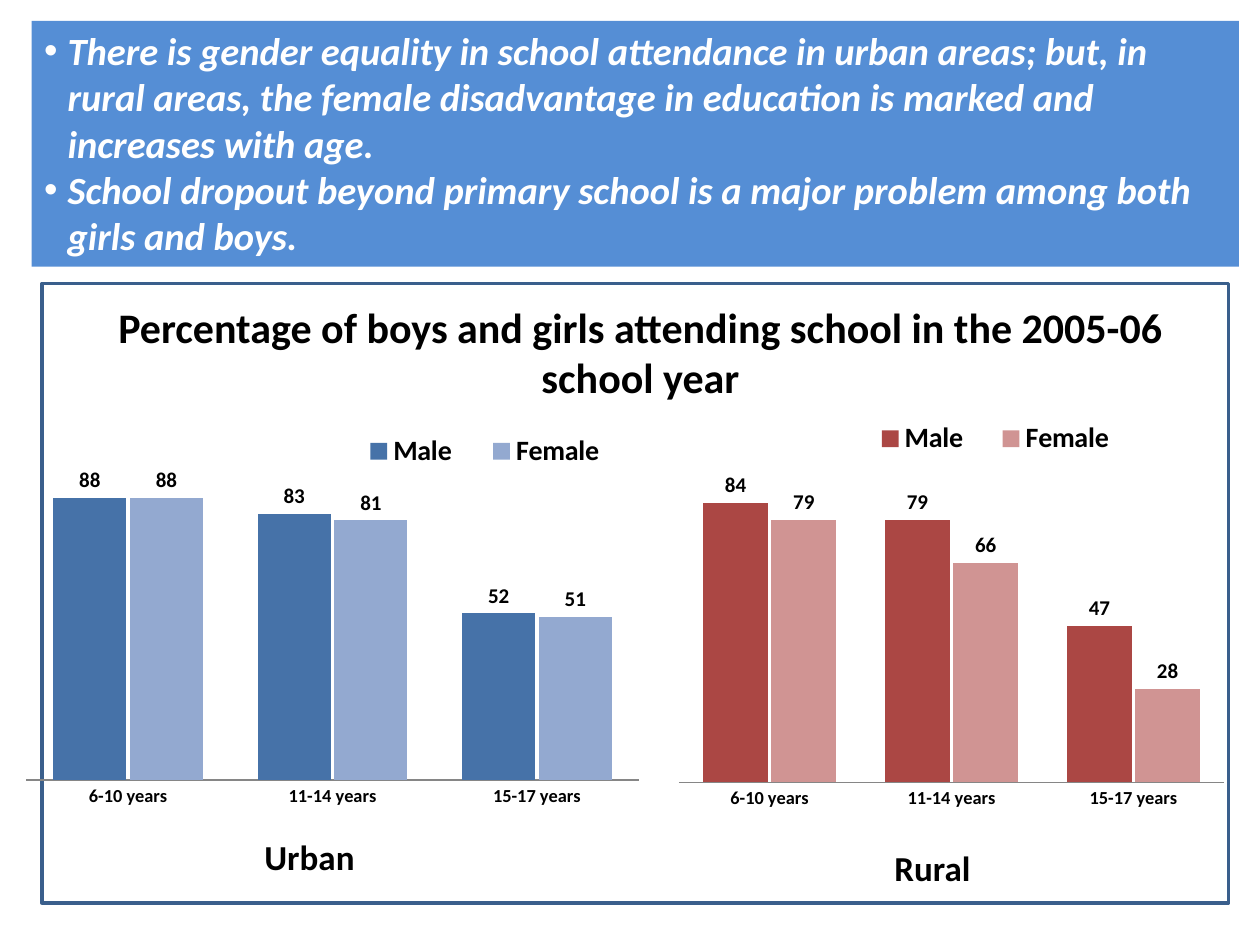
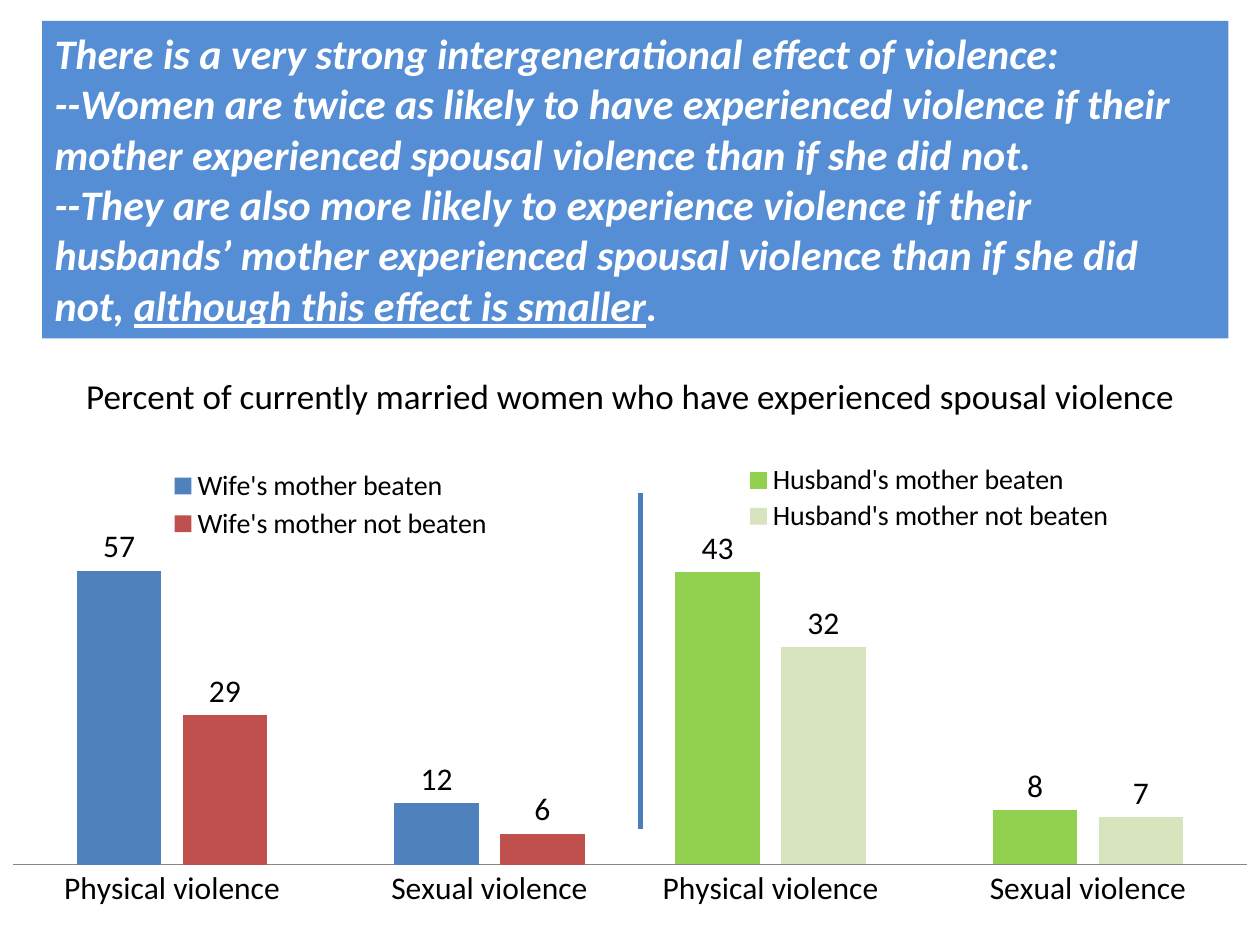
from collections import namedtuple
from dataclasses import dataclass

from lxml import etree
from pptx import Presentation
from pptx.chart.data import CategoryChartData
from pptx.dml.color import RGBColor
from pptx.enum import chart as ch, shapes, text
from pptx.oxml import ns
from pptx.util import Pt

Box = namedtuple("Box", "left top width height")


@dataclass(frozen=True)
class Theme:
    font: str = "Calibri"
    ink: str = "000000"
    paper: str = "FFFFFF"
    band: str = "558ED5"
    frame: str = "3A5F8C"
    divider: str = "4B7EBC"
    axis: str = "868686"
    urban: tuple = ("4672A8", "93A9D0")
    rural: tuple = ("AB4744", "D09493")
    wife: tuple = ("4F81BD", "C0504D")
    husband: tuple = ("92D050", "D7E4BD")
    heading: float = 24
    caption: float = 20
    findings: float = 22
    legend: float = 16


@dataclass(frozen=True)
class ChartStyle:
    category_size: float
    value_size: float
    bold: bool
    gap: int
    overlap: int


THEME = Theme()
ATTENDANCE = ChartStyle(10.5, 12, True, 75, -5)
VIOLENCE = ChartStyle(18, 18, False, 150, -25)


def rgb(value):
    return RGBColor.from_string(value)


def place(shape, box):
    shape.left, shape.top, shape.width, shape.height = map(Pt, box)


def style_font(font, size, color=THEME.ink, bold=False, italic=False):
    font.name = THEME.font
    font.size = Pt(size)
    font.bold = bold
    font.italic = italic
    font.color.rgb = rgb(color)


def add_run(paragraph, words, size, **style):
    run = paragraph.add_run()
    run.text = words
    style_font(run.font, size, **style)
    return run


def set_heading(slide, box, words, size, align, bold=False):
    heading = slide.shapes.title
    place(heading, box)
    frame = heading.text_frame
    frame.word_wrap = True
    frame.auto_size = text.MSO_AUTO_SIZE.NONE
    frame.vertical_anchor = text.MSO_ANCHOR.MIDDLE
    paragraph = frame.paragraphs[0]
    paragraph.alignment = align
    add_run(paragraph, words, size, bold=bold)


def set_bullet(paragraph, indent):
    """Hang a bullet by indent points, or remove it when indent is 0."""
    props = paragraph._p.get_or_add_pPr()
    props.set("marL", str(Pt(indent)))
    props.set("indent", str(-Pt(indent)))
    bullet = etree.SubElement(props, ns.qn("a:buChar" if indent else "a:buNone"))
    if indent:
        bullet.set("char", "•")


def fill_band(slide, box, paragraphs, size, indent=0):
    """Each paragraph is a list of lines; each line a list of (words, underlined)."""
    band = slide.placeholders[1]
    place(band, box)
    band.fill.solid()
    band.fill.fore_color.rgb = rgb(THEME.band)
    frame = band.text_frame
    frame.word_wrap = True
    frame.auto_size = text.MSO_AUTO_SIZE.NONE
    frame.vertical_anchor = text.MSO_ANCHOR.TOP
    for index, lines in enumerate(paragraphs):
        paragraph = frame.add_paragraph() if index else frame.paragraphs[0]
        set_bullet(paragraph, indent)
        paragraph.space_before = Pt(0)
        for number, line in enumerate(lines):
            if number:
                paragraph.add_line_break()
            for words, underlined in line:
                run = add_run(paragraph, words, size, color=THEME.paper,
                              bold=True, italic=True)
                if underlined:
                    run.font.underline = True


def set_layout(parent, area, after=None):
    """Fix a chart part at area, given as fractions of the chart."""
    for old in parent.findall(ns.qn("c:layout")):
        parent.remove(old)
    layout = etree.Element(ns.qn("c:layout"))
    manual = etree.SubElement(layout, ns.qn("c:manualLayout"))
    settings = [("xMode", "edge"), ("yMode", "edge"), *zip("xywh", area)]
    if after is None:
        settings.insert(0, ("layoutTarget", "inner"))
        parent.insert(0, layout)
    else:
        after.addnext(layout)
    for tag, value in settings:
        etree.SubElement(manual, ns.qn(f"c:{tag}")).set("val", str(value))


def add_columns(slide, box, categories, series, colors, style, top_value,
                plot_area, legend_area):
    data = CategoryChartData(number_format="0")
    data.categories = categories
    for name, values in series.items():
        data.add_series(name, values)
    chart = slide.shapes.add_chart(
        ch.XL_CHART_TYPE.COLUMN_CLUSTERED, *map(Pt, box), data).chart
    chart.has_title = False
    style_font(chart.font, style.value_size)

    values_axis = chart.value_axis
    values_axis.minimum_scale, values_axis.maximum_scale = 0, top_value
    values_axis.has_major_gridlines = False
    values_axis.visible = False
    ages = chart.category_axis
    ages.major_tick_mark = ch.XL_TICK_MARK.NONE
    ages.format.line.color.rgb = rgb(THEME.axis)
    ages.format.line.width = Pt(0.75)
    style_font(ages.tick_labels.font, style.category_size, bold=style.bold)

    plot = chart.plots[0]
    plot.vary_by_categories = False
    plot.gap_width, plot.overlap = style.gap, style.overlap
    plot.has_data_labels = True
    labels = plot.data_labels
    labels.show_value = True
    labels.position = ch.XL_LABEL_POSITION.OUTSIDE_END
    style_font(labels.font, style.value_size, bold=style.bold)
    for columns, color in zip(plot.series, colors):
        columns.format.fill.solid()
        columns.format.fill.fore_color.rgb = rgb(color)

    chart.has_legend = True
    legend = chart.legend
    legend.position = ch.XL_LEGEND_POSITION.TOP
    legend.include_in_layout = False
    style_font(legend.font, THEME.legend, bold=style.bold)
    key = legend._element
    set_layout(key, legend_area, after=key.find(ns.qn("c:legendPos")))
    set_layout(chart._chartSpace.chart.plotArea, plot_area)


def add_frame(slide, box):
    """Outline the chart region, behind the heading."""
    frame = slide.shapes.add_shape(shapes.MSO_SHAPE.RECTANGLE, *map(Pt, box))
    frame.shadow.inherit = False
    frame.fill.solid()
    frame.fill.fore_color.rgb = rgb(THEME.paper)
    frame.line.color.rgb = rgb(THEME.frame)
    frame.line.width = Pt(2)
    slide.shapes.title._element.addprevious(frame._element)


def add_caption(slide, box, words):
    caption = slide.shapes.add_textbox(*map(Pt, box)).text_frame
    caption.word_wrap = True
    add_run(caption.paragraphs[0], words, THEME.caption, bold=True)


def add_divider(slide, x, top, bottom):
    divider = slide.shapes.add_connector(
        shapes.MSO_CONNECTOR.STRAIGHT, Pt(x), Pt(bottom), Pt(x), Pt(top))
    divider.line.color.rgb = rgb(THEME.divider)
    divider.line.width = Pt(3)
    etree.SubElement(divider._element.spPr, ns.qn("a:effectLst"))


def build_attendance(slide):
    fill_band(slide, Box(18, 12, 690, 140.4), [
        [[("There is gender equality in school attendance in urban areas; but, "
           "in rural areas, the female disadvantage in education is marked and "
           "increases with age.", False)]],
        [[("School dropout beyond primary school is a major problem among both "
           "girls and boys.", False)]],
    ], THEME.findings, indent=13.5)
    add_frame(slide, Box(24, 162, 678, 354))
    set_heading(slide, Box(42, 174, 648, 54),
                "Percentage of boys and girls attending school in the 2005-06 "
                "school year", THEME.heading, text.PP_ALIGN.CENTER, bold=True)
    ages = ["6-10 years", "11-14 years", "15-17 years"]
    add_columns(slide, Box(0, 222, 372, 276), ages,
                {"Male": (88, 83, 52), "Female": (88, 81, 51)},
                THEME.urban, ATTENDANCE, 100,
                (0.04, 0.147, 0.942, 0.664), (0.52, 0.09, 0.45, 0.08))
    add_columns(slide, Box(378, 234, 329, 258), ages,
                {"Male": (84, 79, 47), "Female": (79, 66, 28)},
                THEME.rural, ATTENDANCE, 90,
                (0.03, 0.163, 0.948, 0.663), (0.33, 0.02, 0.5, 0.09))
    add_caption(slide, Box(144, 474, 78, 32), "Urban")
    add_caption(slide, Box(504, 480, 78, 32), "Rural")


def build_violence(slide):
    fill_band(slide, Box(24, 12, 678, 181.4), [
        [[("There is a very strong intergenerational effect of violence:", False)]],
        [[("--Women are twice as likely to have experienced violence if their "
           "mother experienced spousal violence than if she did not.", False)],
         [("--They are also more likely to experience violence if their "
           "husbands’ mother experienced spousal violence than if she did not, ",
           False),
          ("although this effect is smaller", True), (".", False)]],
    ], THEME.heading)
    set_heading(slide, Box(42, 210, 654, 32),
                "Percent of currently married women who have experienced "
                "spousal violence", THEME.caption, text.PP_ALIGN.LEFT)
    kinds = ["Physical violence", "Sexual violence"]
    add_columns(slide, Box(0, 258, 378, 266), kinds,
                {"Wife's mother beaten": (57, 12),
                 "Wife's mother not beaten": (29, 6)},
                THEME.wife, VIOLENCE, 60,
                (0.02, 0.223, 0.96, 0.665), (0.25, 0.03, 0.5, 0.17))
    add_columns(slide, Box(342, 264, 378, 260.5), kinds,
                {"Husband's mother beaten": (43, 8),
                 "Husband's mother not beaten": (32, 7)},
                THEME.husband, VIOLENCE, 50,
                (0.02, 0.138, 0.96, 0.745), (0.22, 0, 0.56, 0.16))
    add_divider(slide, 366, 282, 474)


def main():
    deck = Presentation()
    deck.slide_width, deck.slide_height = Pt(720), Pt(540)
    title_and_content = deck.slide_layouts[1]
    for build in (build_attendance, build_violence):
        build(deck.slides.add_slide(title_and_content))
    deck.save("out.pptx")


if __name__ == "__main__":
    main()
